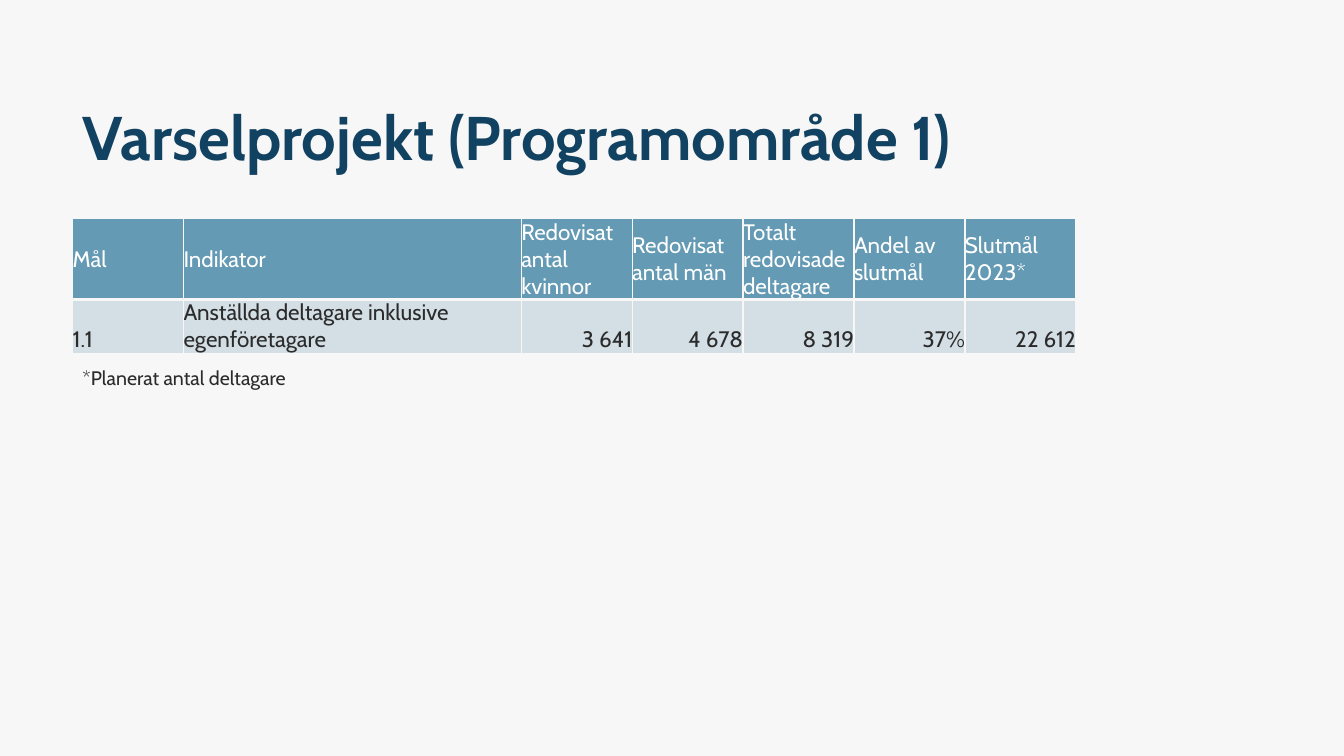
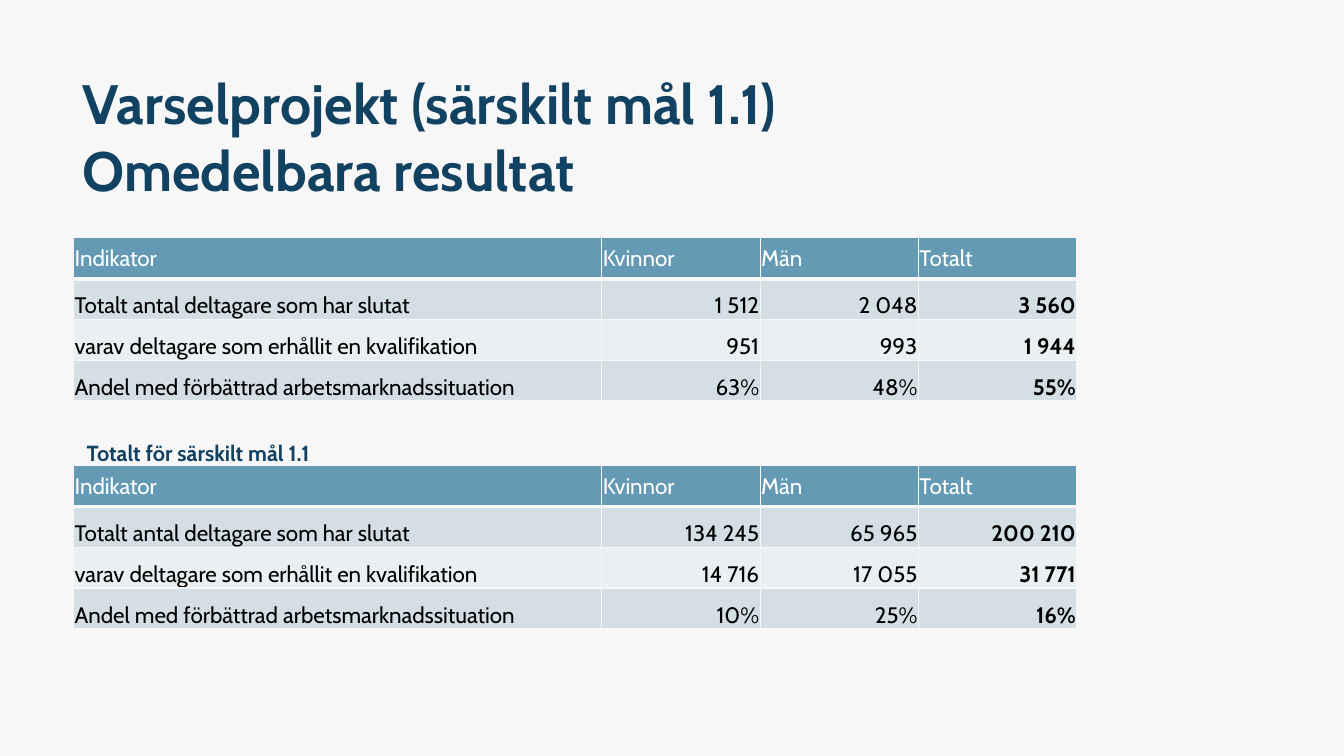
import dataclasses

import pptx
import pptx.dml.color
import pptx.enum.text
import pptx.oxml.ns
import pptx.presentation
import pptx.slide
import pptx.table
import pptx.text.text
import pptx.util
from lxml import etree
from pptx.util import Inches

ALIGN = pptx.enum.text.PP_ALIGN
ANCHOR = pptx.enum.text.MSO_ANCHOR


@dataclasses.dataclass(frozen=True)
class Theme:
    font: str = "Cabin"
    background: str = "F8F7F7"
    title: str = "124261"
    text: str = "2B2B2B"
    black: str = "000000"
    white: str = "FFFFFF"
    header: str = "649AB3"
    bands: tuple[str, str] = ("D3DEE5", "EAEFF2")
    title_size: float = 44
    long_title_size: float = 39.6
    subtitle_size: float = 15.6
    table_size: float = 16
    note_size: float = 14
    thin_rule: float = 1
    header_rule: float = 3


THEME = Theme()


@dataclasses.dataclass(frozen=True)
class Style:
    size: float
    color: str
    bold: bool = False


@dataclasses.dataclass(frozen=True)
class Area:
    left: float
    top: float
    width: float
    height: float


@dataclasses.dataclass(frozen=True)
class Grid:
    left: float
    top: float
    columns: list[float]
    heights: list[float]
    rows: list[list[str]]
    label_columns: int
    color: str
    inset: float = 0
    bold_last: bool = False


TITLE_AREA = Area(0.72, 0.62, 9.97, 1.45)
RESULT_HEADER = ["Indikator", "Kvinnor", "Män", "Totalt"]
RESULT_LABELS = [
    "Totalt antal deltagare som har slutat",
    "varav deltagare som erhållit en kvalifikation",
    "Andel med förbättrad arbetsmarknadssituation",
]


def rgb(color: str) -> pptx.dml.color.RGBColor:
    return pptx.dml.color.RGBColor.from_string(color)


def add_span(para: pptx.text.text._Paragraph, text: str, style: Style) -> None:
    span = para.add_run()
    span.text = text
    span.font.name = THEME.font
    span.font.size = pptx.util.Pt(style.size)
    span.font.bold = style.bold
    span.font.color.rgb = rgb(style.color)


def add_text(page: pptx.slide.Slide, area: Area, lines: list[str], style: Style) -> None:
    box = page.shapes.add_textbox(
        Inches(area.left), Inches(area.top), Inches(area.width), Inches(area.height)
    )
    frame = box.text_frame
    frame.word_wrap = True
    frame.vertical_anchor = ANCHOR.MIDDLE
    para = frame.paragraphs[0]
    for index, line in enumerate(lines):
        if index:
            para.add_line_break()
        add_span(para, line, style)


def add_page(
    deck: pptx.presentation.Presentation, title: list[str], size: float
) -> pptx.slide.Slide:
    page = deck.slides.add_slide(deck.slide_layouts[6])
    page.background.fill.solid()
    page.background.fill.fore_color.rgb = rgb(THEME.background)
    add_text(page, TITLE_AREA, title, Style(size, THEME.title, True))
    return page


def set_borders(cell: pptx.table._Cell, top: float, bottom: float) -> None:
    properties = cell._tc.get_or_add_tcPr()
    widths = {"lnL": THEME.thin_rule, "lnR": THEME.thin_rule, "lnT": top, "lnB": bottom}
    for tag, width in widths.items():
        line = etree.SubElement(
            properties, pptx.oxml.ns.qn(f"a:{tag}"), w=str(pptx.util.Pt(width))
        )
        fill = etree.SubElement(line, pptx.oxml.ns.qn("a:solidFill"))
        etree.SubElement(fill, pptx.oxml.ns.qn("a:srgbClr"), val=THEME.background)


def fill_cell(cell: pptx.table._Cell, grid: Grid, row: int, column: int) -> None:
    is_header = row == 0
    is_number = not is_header and column >= grid.label_columns
    is_bold = is_number and grid.bold_last and column == len(grid.columns) - 1
    set_borders(
        cell,
        top=THEME.header_rule if row == 1 else THEME.thin_rule,
        bottom=THEME.header_rule if is_header else THEME.thin_rule,
    )
    cell.fill.solid()
    cell.fill.fore_color.rgb = rgb(THEME.header if is_header else THEME.bands[(row - 1) % 2])
    cell.margin_left = cell.margin_right = cell.margin_top = Inches(grid.inset)
    cell.margin_bottom = 0
    cell.vertical_anchor = ANCHOR.MIDDLE if is_header else ANCHOR.BOTTOM
    para = cell.text_frame.paragraphs[0]
    para.alignment = ALIGN.RIGHT if is_number else ALIGN.LEFT
    color = THEME.white if is_header else grid.color
    add_span(para, grid.rows[row][column], Style(THEME.table_size, color, is_bold))


def add_grid(page: pptx.slide.Slide, grid: Grid) -> None:
    table = page.shapes.add_table(
        len(grid.rows),
        len(grid.columns),
        Inches(grid.left),
        Inches(grid.top),
        Inches(sum(grid.columns)),
        Inches(sum(grid.heights)),
    ).table
    table.first_row = False
    table.horz_banding = False
    for column, width in enumerate(grid.columns):
        table.columns[column].width = Inches(width)
    for row, height in enumerate(grid.heights):
        table.rows[row].height = Inches(height)
        for column in range(len(grid.columns)):
            fill_cell(table.cell(row, column), grid, row, column)


def add_results(page: pptx.slide.Slide, top: float, values: list[list[str]]) -> None:
    body = [[label, *numbers] for label, numbers in zip(RESULT_LABELS, values)]
    rows = [RESULT_HEADER, *body]
    add_grid(
        page,
        Grid(
            left=0.73,
            top=top,
            columns=[5.24] + [1.57] * 3,
            heights=[0.405] * len(rows),
            rows=rows,
            label_columns=1,
            color=THEME.black,
            inset=0.01,
            bold_last=True,
        ),
    )


def build_programme_page(deck: pptx.presentation.Presentation) -> None:
    page = add_page(deck, ["Varselprojekt (Programområde 1)"], THEME.title_size)
    add_grid(
        page,
        Grid(
            left=0.72,
            top=2.17,
            columns=[1.1, 3.35] + [1.1] * 5,
            heights=[0.8, 0.53],
            rows=[
                [
                    "Mål",
                    "Indikator",
                    "Redovisat antal kvinnor",
                    "Redovisat antal män",
                    "Totalt redovisade deltagare",
                    "Andel av slutmål",
                    "Slutmål 2023*",
                ],
                [
                    "1.1",
                    "Anställda deltagare inklusive egenföretagare",
                    "3 641",
                    "4 678",
                    "8 319",
                    "37%",
                    "22 612",
                ],
            ],
            label_columns=2,
            color=THEME.text,
        ),
    )
    add_text(
        page,
        Area(0.72, 3.5, 2.53, 0.5),
        ["*Planerat antal deltagare"],
        Style(THEME.note_size, THEME.text),
    )


def build_results_page(deck: pptx.presentation.Presentation) -> None:
    page = add_page(
        deck,
        ["Varselprojekt (särskilt mål 1.1)", "Omedelbara resultat"],
        THEME.long_title_size,
    )
    add_results(
        page,
        2.36,
        [["1 512", "2 048", "3 560"], ["951", "993", "1 944"], ["63%", "48%", "55%"]],
    )
    add_results(
        page,
        4.62,
        [
            ["134 245", "65 965", "200 210"],
            ["14 716", "17 055", "31 771"],
            ["10%", "25%", "16%"],
        ],
    )
    add_text(
        page,
        Area(0.76, 4.3, 3.08, 0.38),
        ["Totalt för särskilt mål 1.1"],
        Style(THEME.subtitle_size, THEME.title, True),
    )


def main() -> None:
    deck = pptx.Presentation()
    deck.slide_width = Inches(13.33)
    deck.slide_height = Inches(7.5)
    build_programme_page(deck)
    build_results_page(deck)
    deck.save("out.pptx")


if __name__ == "__main__":
    main()
